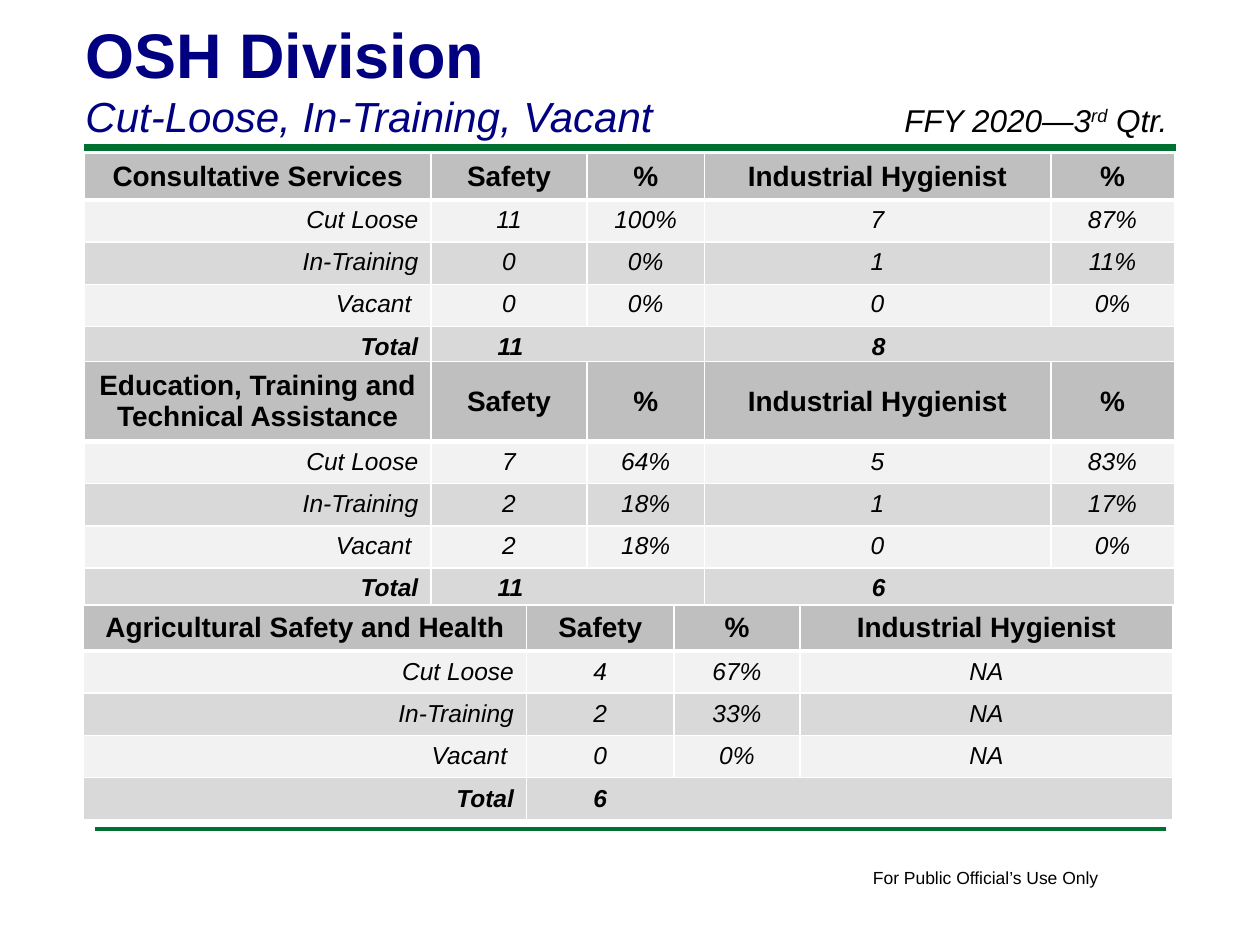
import pptx
import pptx.util
import pptx.dml.color
import pptx.enum.shapes
import pptx.enum.text
import pptx.oxml
import pptx.oxml.ns
from lxml import etree

Inches = pptx.util.Inches
PP = pptx.enum.text.PP_ALIGN
ANCHOR = pptx.enum.text.MSO_ANCHOR


def color(value):
    return pptx.dml.color.RGBColor.from_string(value)


def style(p, size, hex_color, bold=False, italic=False):
    for r in p.runs:
        r.font.name = "Arial"
        r.font.size = pptx.util.Pt(size)
        r.font.color.rgb = color(hex_color)
        r.font.bold = bold
        r.font.italic = italic


prs = pptx.Presentation()
prs.slide_width, prs.slide_height = Inches(10), Inches(7.5)
s = prs.slides.add_slide(prs.slide_layouts[6])

for x1, x2, y, width in [(0.67, 9.33, 1.17, 4), (0.75, 9.25, 6.58, 2)]:
    line = s.shapes.add_connector(pptx.enum.shapes.MSO_CONNECTOR.STRAIGHT,
                                  Inches(x1), Inches(y), Inches(x2), Inches(y))
    line.line.color.rgb = color("007030")
    line.line.width = pptx.util.Pt(width)
    etree.SubElement(line._element.spPr, pptx.oxml.ns.qn("a:effectLst"))

sp = s.shapes.add_textbox(Inches(6.83), Inches(6.83), Inches(2.01), Inches(0.27))
sp.text_frame.word_wrap = False
sp.text_frame.text = "For Public Official’s Use Only"
style(sp.text_frame.paragraphs[0], 10, "000000")

sp = s.shapes.add_textbox(Inches(0.58), Inches(0.06), Inches(8.25), Inches(1.11))
tf = sp.text_frame
tf.word_wrap = True
tf.vertical_anchor = ANCHOR.BOTTOM
tf.text = "OSH Division\nCut-Loose, In-Training, Vacant"
style(tf.paragraphs[0], 36, "000080", bold=True)
style(tf.paragraphs[1], 24, "000080", italic=True)

wide = [2.75, 1.24, 0.93, 2.75, 0.98]
staff_heads = ["Safety", "%", "Industrial Hygienist", "%"]
labels = ["Cut Loose", "In-Training", "Vacant ", "Total"]
tables = [
    (0.67, 1.22, 1.7, 0.36, wide, ["Consultative Services"] + staff_heads,
     [["11", "100%", "7", "87%"], ["0", "0%", "1", "11%"],
      ["0", "0%", "0", "0%"], ["11", "", "8", ""]],
     [(1, 2, 0.53), (3, 4, 1.33)], ANCHOR.TOP),
    (0.67, 2.87, 1.97, 0.63, wide,
     ["Education, Training and Technical Assistance"] + staff_heads,
     [["7", "64%", "5", "83%"], ["2", "18%", "1", "17%"],
      ["2", "18%", "0", "0%"], ["11", "", "6", ""]],
     [(1, 2, 0.53), (3, 4, 1.33)], ANCHOR.TOP),
    (0.66, 4.8, 1.7, 0.36, [3.52, 1.17, 1, 2.96],
     ["Agricultural Safety and Health"] + staff_heads[:3],
     [["4", "67%", "NA"], ["2", "33%", "NA"], ["0", "0%", "NA"], ["6", "", ""]],
     [(1, 3, 0.53)], ANCHOR.MIDDLE),
]

for left, top, height, head_height, widths, heads, values, merges, anchor in tables:
    rows = [heads] + [[label] + row for label, row in zip(labels, values)]
    last = len(rows) - 1
    table = s.shapes.add_table(len(rows), len(widths), Inches(left), Inches(top),
                               Inches(sum(widths)), Inches(height)).table
    for column, width in zip(table.columns, widths):
        column.width = Inches(width)
    for i, row in enumerate(rows):
        table.rows[i].height = Inches((height - head_height) / last if i else head_height)
        for j, text in enumerate(row):
            cell = table.cell(i, j)
            tcPr = cell._tc.get_or_add_tcPr()
            weights = {"L": 1, "R": 1, "T": 3 if i == 1 else 1, "B": 1 if i else 3}
            for side, weight in weights.items():
                tcPr.append(pptx.oxml.parse_xml(
                    f'<a:ln{side} {pptx.oxml.ns.nsdecls("a")} w="{weight * 12700}">'
                    f'<a:solidFill><a:srgbClr val="FFFFFF"/></a:solidFill></a:ln{side}>'))
            cell.fill.solid()
            cell.fill.fore_color.rgb = color(["D9D9D9", "F2F2F2"][i % 2] if i else "BFBFBF")
            cell.vertical_anchor = anchor if i else ANCHOR.MIDDLE
            cell.text_frame.text = text
            p = cell.text_frame.paragraphs[0]
            p.alignment = PP.RIGHT if i and j == 0 else PP.CENTER
            style(p, 14 if i else 16, "000000", bold=i in (0, last), italic=i > 0)
    for first, end, margin in merges:
        cell = table.cell(last, first)
        cell.merge(table.cell(last, end))
        cell.margin_left = Inches(margin)
        cell.text_frame.paragraphs[0].alignment = PP.LEFT

sp = s.shapes.add_textbox(Inches(7.08), Inches(0.75), Inches(2.5), Inches(0.4))
sp.text_frame.word_wrap = True
p = sp.text_frame.paragraphs[0]
for text in ["FFY 2020—3", "rd", " Qtr."]:
    r = p.add_run()
    r.text = text
style(p, 18, "000000", italic=True)
p.runs[1]._r.get_or_add_rPr().set("baseline", "30000")

prs.save("out.pptx")
